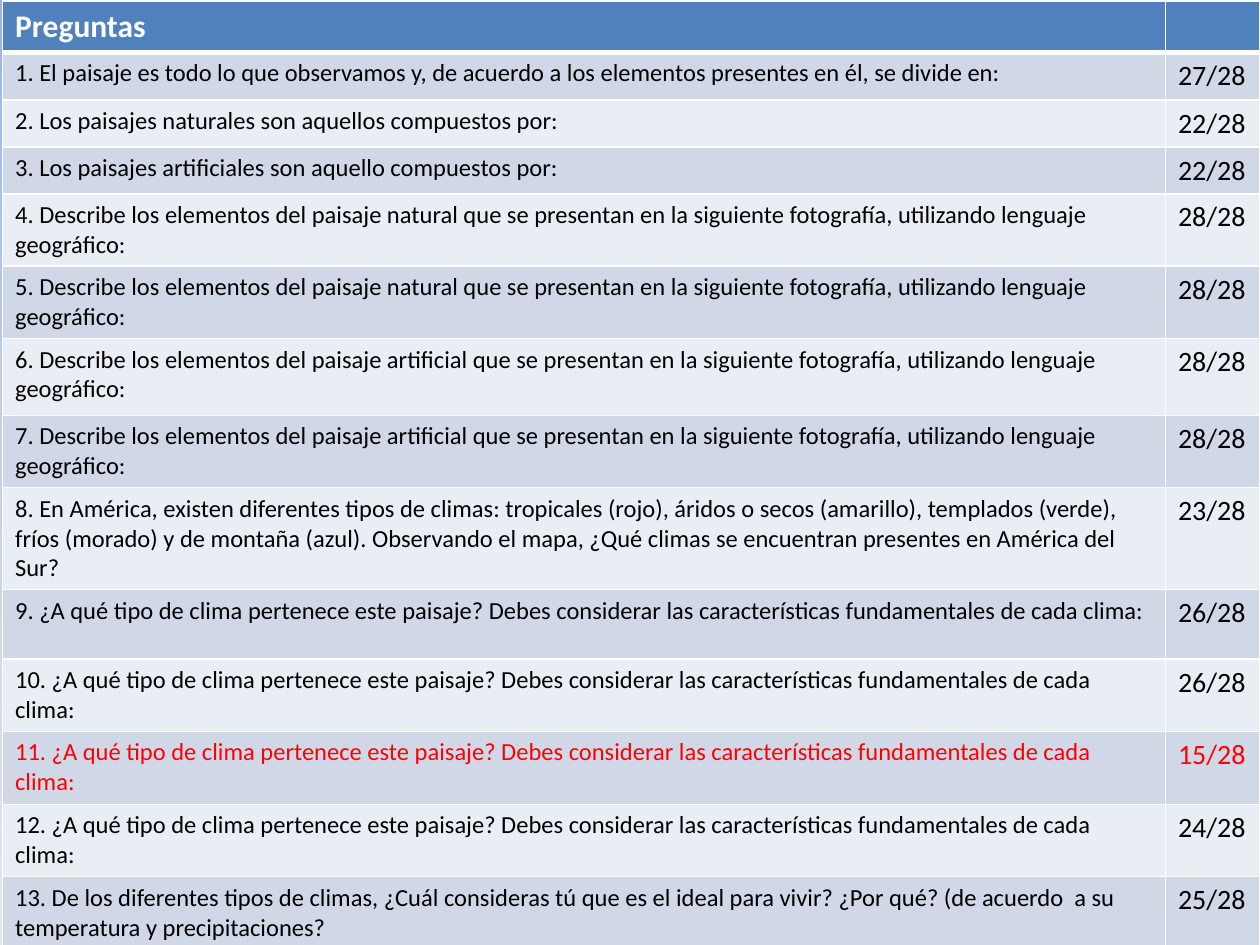
from copy import deepcopy
from dataclasses import dataclass

from pptx import Presentation
from pptx.dml.color import RGBColor as Rgb
from pptx.oxml.ns import qn
from pptx.util import Inches, Pt
from lxml.etree import SubElement


@dataclass(frozen=True)
class Theme:
    font: str = "Calibri"
    header_size: int = 18
    question_size: int = 14
    score_size: int = 16
    header_fill: str = "4F81BD"
    bands: tuple = ("D0D8E8", "E9EDF4")
    white: str = "FFFFFF"
    text: str = "000000"
    alert: str = "FF0000"
    backdrop: tuple = ((0, "9AB5E4"), (0.5, "C2D1ED"), (1, "E1E8F5"))
    thin: int = 1
    thick: int = 3


THEME = Theme()
STUDENTS = 28
COLUMN_WIDTHS = (9.23, 0.75)
HEADER_HEIGHT = 0.39

DESCRIBE = ("Describe los elementos del paisaje {} que se presentan en la "
            "siguiente fotografía, utilizando lenguaje geográfico:")
CLIMATE = ("¿A qué tipo de clima pertenece este paisaje? Debes considerar las "
           "características fundamentales de cada clima:")

# Question, right answers, row height
QUESTIONS = [
    ("El paisaje es todo lo que observamos y, de acuerdo a los elementos "
     "presentes en él, se divide en:", 27, 0.38),
    ("Los paisajes naturales son aquellos compuestos por:", 22, 0.35),
    ("Los paisajes artificiales son aquello compuestos por:", 22, 0.35),
    (DESCRIBE.format("natural"), 28, 0.55),
    (DESCRIBE.format("natural"), 28, 0.55),
    (DESCRIBE.format("artificial"), 28, 0.61),
    (DESCRIBE.format("artificial"), 28, 0.55),
    ("En América, existen diferentes tipos de climas: tropicales (rojo), "
     "áridos o secos (amarillo), templados (verde), fríos (morado) y de "
     "montaña (azul). Observando el mapa, ¿Qué climas se encuentran presentes "
     "en América del Sur?", 23, 0.77),
    (CLIMATE, 26, 0.55),
    (CLIMATE, 26, 0.55),
    (CLIMATE, 15, 0.58),
    (CLIMATE, 24, 0.55),
    ("De los diferentes tipos de climas, ¿Cuál consideras tú que es el ideal "
     "para vivir? ¿Por qué? (de acuerdo  a su temperatura y precipitaciones?",
     25, 0.77),
]
WEAK_QUESTION = 11


def paint_background(page):
    """Fill the page with a three-stop vertical gradient."""
    fill = page.background.fill
    fill.gradient()
    fill.gradient_angle = 270
    stop_list = page.element.find(".//" + qn("a:gsLst"))
    stop_list.append(deepcopy(stop_list[-1]))
    for stop, (position, color) in zip(fill.gradient_stops, THEME.backdrop):
        stop.position = position
        stop.color.rgb = Rgb.from_string(color)


def set_borders(cell, top, bottom):
    """Draw white cell edges; top and bottom are widths in points."""
    properties = cell._tc.get_or_add_tcPr()
    widths = {"a:lnL": THEME.thin, "a:lnR": THEME.thin, "a:lnT": top, "a:lnB": bottom}
    for tag, width in widths.items():
        line = SubElement(properties, qn(tag), w=str(Pt(width)))
        solid = SubElement(line, qn("a:solidFill"))
        SubElement(solid, qn("a:srgbClr"), val=THEME.white)


def fill_cell(cell, text, size, color, fill, bold=False, top=1, bottom=1):
    set_borders(cell, top, bottom)
    cell.fill.solid()
    cell.fill.fore_color.rgb = Rgb.from_string(fill)
    cell.text_frame.text = text
    font = cell.text_frame.paragraphs[0].font
    for target in [font] + [span.font for span in cell.text_frame.paragraphs[0].runs]:
        target.name = THEME.font
        target.size = Pt(size)
        target.bold = bold
        target.color.rgb = Rgb.from_string(color)


def add_results_table(page):
    heights = [HEADER_HEIGHT] + [height for _, _, height in QUESTIONS]
    table = page.shapes.add_table(
        len(heights), len(COLUMN_WIDTHS), Inches(0.02), Inches(0.01),
        Inches(sum(COLUMN_WIDTHS)), Inches(sum(heights))).table
    for column, width in zip(table.columns, COLUMN_WIDTHS):
        column.width = Inches(width)
    for row, height in zip(table.rows, heights):
        row.height = Inches(height)

    # Header row
    for column, text in enumerate(("Preguntas", "")):
        fill_cell(table.cell(0, column), text, THEME.header_size, THEME.white,
                  THEME.header_fill, bold=True, bottom=THEME.thick)

    # One banded row for each question
    for number, (question, score, _) in enumerate(QUESTIONS, start=1):
        color = THEME.alert if number == WEAK_QUESTION else THEME.text
        band = THEME.bands[(number - 1) % 2]
        top = THEME.thick if number == 1 else THEME.thin
        fill_cell(table.cell(number, 0), f"{number}. {question}",
                  THEME.question_size, color, band, top=top)
        fill_cell(table.cell(number, 1), f"{score}/{STUDENTS}",
                  THEME.score_size, color, band, top=top)


def main():
    deck = Presentation()
    deck.slide_width, deck.slide_height = Inches(10), Inches(7.5)
    page = deck.slides.add_slide(deck.slide_layouts.get_by_name("Blank"))
    paint_background(page)
    add_results_table(page)
    deck.save("out.pptx")


if __name__ == "__main__":
    main()
